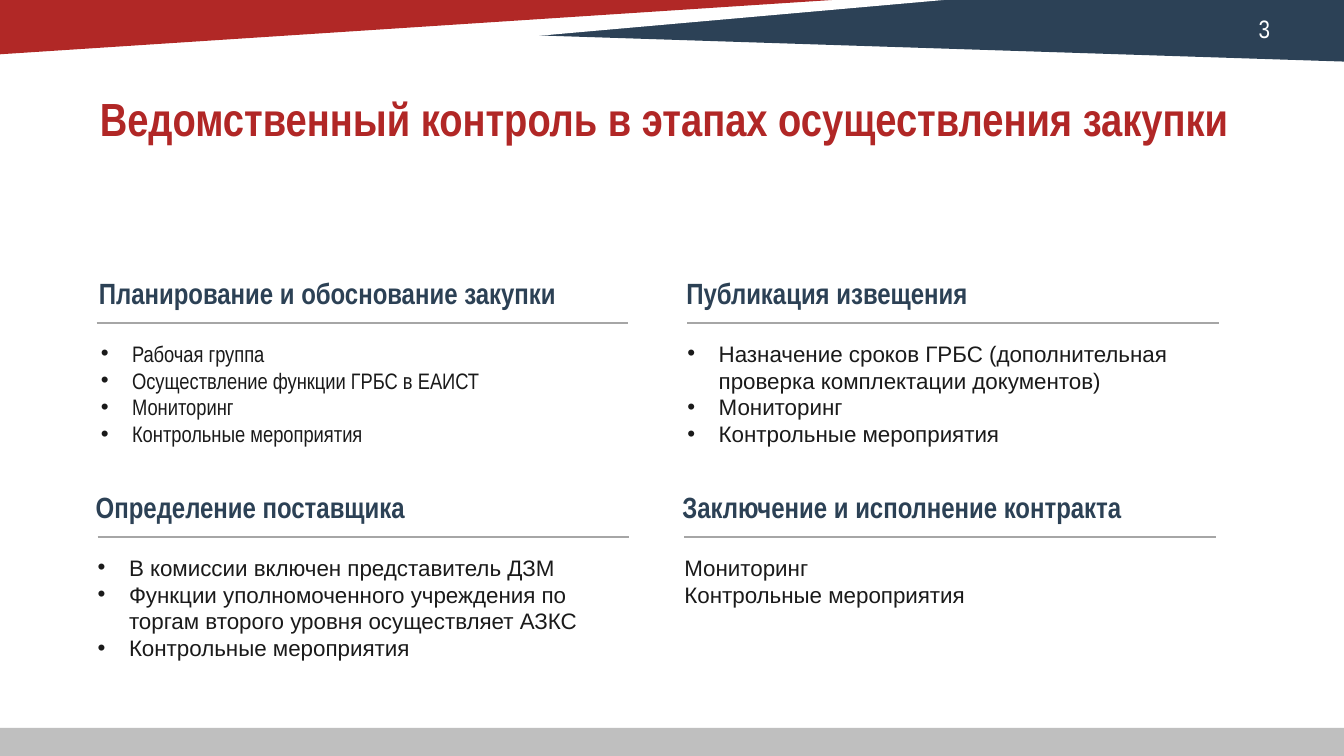
from dataclasses import dataclass

from lxml.etree import SubElement
from pptx import Presentation
from pptx.dml.color import RGBColor
from pptx.enum.shapes import MSO_CONNECTOR as CONNECTOR, MSO_SHAPE as SHAPE
from pptx.oxml.ns import qn
from pptx.util import Pt

RED, NAVY, WHITE = "B12826", "2C4156", "FFFFFF"
TITLE_RED, HEADING_NAVY, INK = "B12726", "2C4155", "1A1A1A"
RULE_GREY, FOOTER_GREY = "A6A6A6", "BFBFBF"
NARROW, REGULAR = "Arial Narrow", "Arial"
PAGE_WIDTH, PAGE_HEIGHT = 960, 540
COLUMN_WIDTH = 379.4
BULLET_INDENT = 22.4
TOP_ROW, BOTTOM_ROW = 230.8, 383.6


@dataclass
class Stage:
    heading: str
    items: list
    heading_left: float
    rule_left: float
    body_left: float
    rule_top: float
    font: str = REGULAR
    bulleted: bool = True


# Bands run from back to front
BANDS = [
    (NAVY, [(960, -3.6), (960.5, 44), (291.6, 22.3), (139.7, -3.6)]),
    (WHITE, [(-2.2, -2.9), (-2.2, 59.8), (707, -2.9)]),
    (WHITE, [(-3.6, -3.6), (-1.4, 62.6), (602, -2.9)]),
    (RED, [(-2.2, -2.9), (-2.2, 38.9), (638.6, -2.9)]),
]

STAGES = [
    Stage("Планирование и обоснование закупки",
          ["Рабочая группа", "Осуществление функции ГРБС в ЕАИСТ",
           "Мониторинг", "Контрольные мероприятия"],
          70.6, 69.1, 72, TOP_ROW, font=NARROW),
    Stage("Публикация извещения",
          ["Назначение сроков ГРБС (дополнительная проверка комплектации документов)",
           "Мониторинг", "Контрольные мероприятия"],
          490.3, 491, 491, TOP_ROW),
    Stage("Определение поставщика",
          ["В комиссии включен представитель ДЗМ",
           "Функции уполномоченного учреждения по торгам второго уровня осуществляет АЗКС",
           "Контрольные мероприятия"],
          68.4, 69.8, 69.8, BOTTOM_ROW),
    Stage("Заключение и исполнение контракта",
          ["Мониторинг", "Контрольные мероприятия"],
          487.4, 488.9, 488.9, BOTTOM_ROW, bulleted=False),
]


def color(value):
    return RGBColor.from_string(value)


def paint(shape, fill):
    shape.shadow.inherit = False
    shape.fill.solid()
    shape.fill.fore_color.rgb = color(fill)
    shape.line.fill.background()


def add_band(page, fill, points):
    builder = page.shapes.build_freeform(
        Pt(points[0][0]), Pt(points[0][1]), scale=1.0)
    builder.add_line_segments([(Pt(x), Pt(y)) for x, y in points[1:]], close=True)
    paint(builder.convert_to_shape(), fill)


def add_rule(page, left, top):
    rule = page.shapes.add_connector(
        CONNECTOR.STRAIGHT, Pt(left), Pt(top), Pt(left + COLUMN_WIDTH), Pt(top))
    rule.line.color.rgb = color(RULE_GREY)
    rule.line.width = Pt(1.75)
    SubElement(rule._element.spPr, qn("a:effectLst"))


def add_bullet(para):
    properties = para._p.get_or_add_pPr()
    properties.set("marL", str(Pt(BULLET_INDENT)))
    properties.set("indent", str(-Pt(BULLET_INDENT)))
    SubElement(properties, qn("a:buFont"), typeface="Arial")
    SubElement(properties, qn("a:buChar"), char="•")


def add_text(page, place, lines, size, font, ink, bold=False,
             bulleted=False, spacing=None):
    box = page.shapes.add_textbox(*map(Pt, place))
    frame = box.text_frame
    frame.word_wrap = True
    frame.margin_left = frame.margin_right = 0
    frame.margin_top = frame.margin_bottom = 0
    for index, line in enumerate(lines):
        para = frame.add_paragraph() if index else frame.paragraphs[0]
        if spacing:
            para.line_spacing = spacing
        if bulleted:
            add_bullet(para)
        span = para.add_run()
        span.text = line
        span.font.size = Pt(size)
        span.font.name = font
        span.font.bold = bold
        span.font.color.rgb = color(ink)


def add_stage(page, stage):
    add_text(page, (stage.body_left, stage.rule_top + 12, COLUMN_WIDTH, 78),
             stage.items, 16, stage.font, INK, bulleted=stage.bulleted)
    add_rule(page, stage.rule_left, stage.rule_top)
    add_text(page, (stage.heading_left, stage.rule_top - 34, COLUMN_WIDTH, 25),
             [stage.heading], 20.9, NARROW, HEADING_NAVY, bold=True)


def main():
    deck = Presentation()
    deck.slide_width, deck.slide_height = Pt(PAGE_WIDTH), Pt(PAGE_HEIGHT)
    page = deck.slides.add_slide(deck.slide_layouts[6])

    # Header bands and footer strip
    for fill, points in BANDS:
        add_band(page, fill, points)
    footer = page.shapes.add_shape(
        SHAPE.RECTANGLE, 0, Pt(520), Pt(PAGE_WIDTH), Pt(PAGE_HEIGHT - 520))
    paint(footer, FOOTER_GREY)

    # Page number and title
    add_text(page, (899, 9.4, 50, 21.6), ["3"], 18, NARROW, WHITE)
    add_text(page, (71.3, 67.7, 827.3, 61.2),
             ["Ведомственный контроль в этапах осуществления закупки"],
             33.2, NARROW, TITLE_RED, bold=True, spacing=0.93)

    # Four procurement stages
    for stage in STAGES:
        add_stage(page, stage)

    deck.save("out.pptx")


if __name__ == "__main__":
    main()
